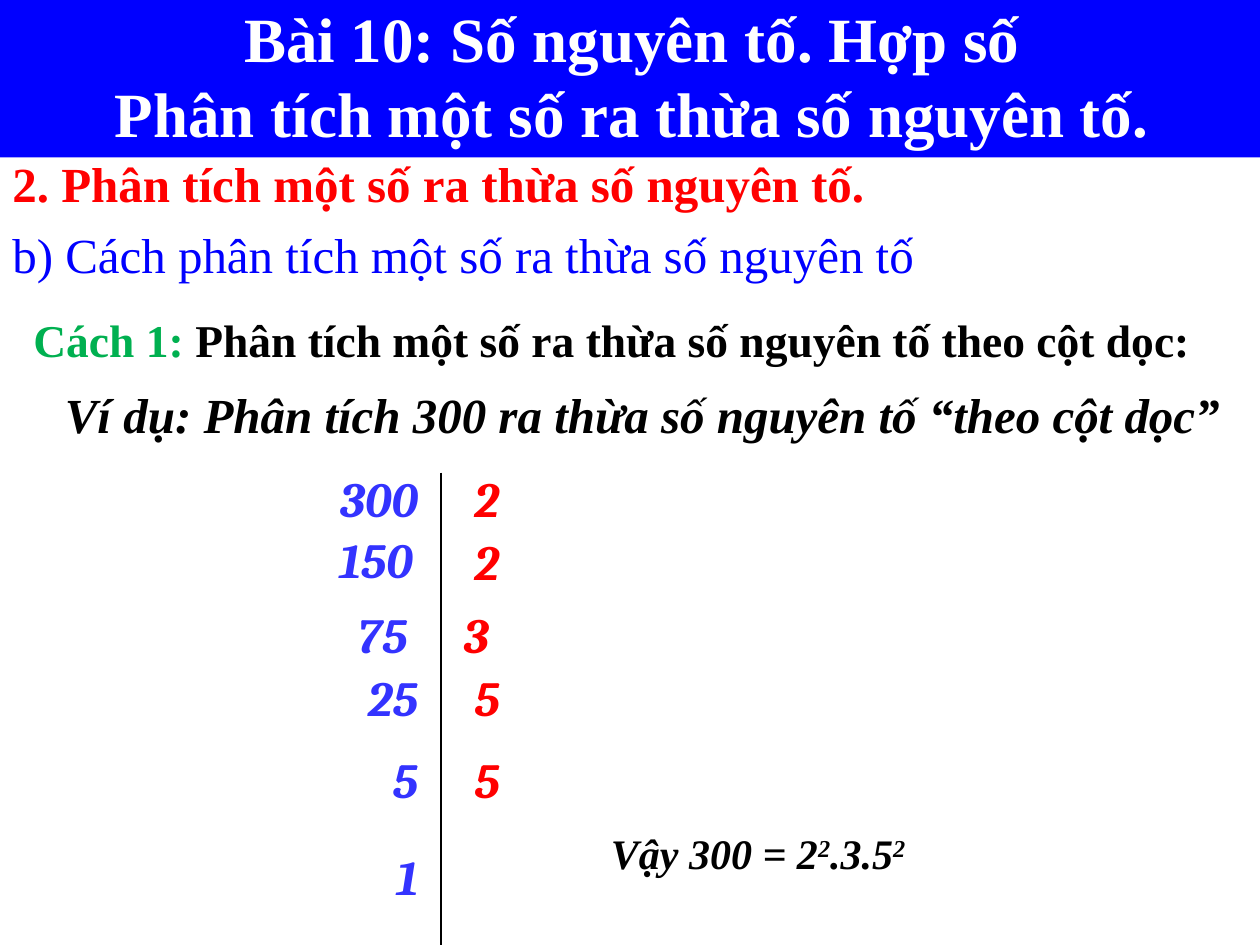
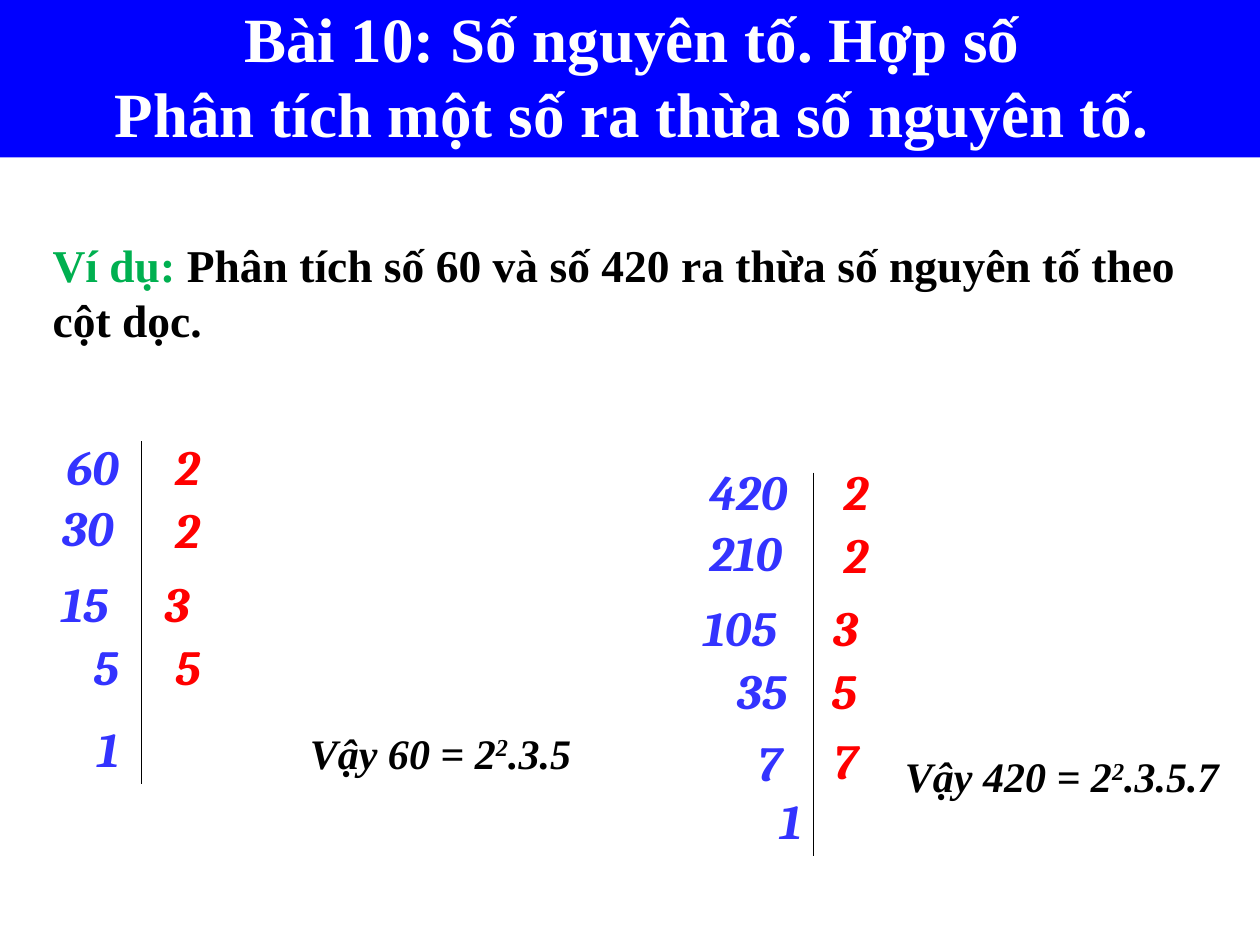
from lxml import etree
from pptx import Presentation
from pptx.dml.color import RGBColor
from pptx.enum.shapes import MSO_CONNECTOR
from pptx.enum.text import MSO_ANCHOR, MSO_AUTO_SIZE, PP_ALIGN
from pptx.oxml.ns import qn
from pptx.util import Pt

# Shared style
SERIF, DIGITS = "Times New Roman", "Cambria"
WHITE, BLACK, RED = "FFFFFF", "000000", "FF0000"
BLUE, GREEN, INDIGO = "0000FF", "00B050", "3333FF"
LESSON = ["Bài 10: Số nguyên tố. Hợp số",
          "Phân tích một số ra thừa số nguyên tố."]

# Ladder steps: offsets of the quotient's right edge and top,
# then of the factor's left edge and top
STEPS = [(-6, 0, 12, 0), (-9, 35, 12, 36), (-12, 78, 6, 78),
         (-6, 114, 12, 114), (-6, 161, 12, 161), (-6, 216, 12, 216)]
TIGHT_STEPS = STEPS[:3] + [(-6, 114, 5, 114), (-9, 155, 6, 154),
                           (2, 188, 6, 188)]


def color(hex_code):
    return RGBColor.from_string(hex_code)


def write(frame, paragraphs, size=28, font=SERIF, fill=BLACK, bold=True,
          italic=False, align=PP_ALIGN.LEFT):
    """Each paragraph is a list of (text, colour or None, superscript) runs."""
    frame.word_wrap = True
    for index, runs in enumerate(paragraphs):
        paragraph = frame.add_paragraph() if index else frame.paragraphs[0]
        paragraph.alignment = align
        for text, run_fill, superscript in runs:
            run = paragraph.add_run()
            run.text = text
            run.font.name, run.font.size = font, Pt(size)
            run.font.bold, run.font.italic = bold, italic
            run.font.color.rgb = color(run_fill or fill)
            if superscript:
                run._r.get_or_add_rPr().set("baseline", "30000")


def add_label(slide, left, top, width, height, runs, **text_format):
    label = slide.shapes.add_textbox(Pt(left), Pt(top), Pt(width), Pt(height))
    if isinstance(runs, str):
        runs = [(runs, None, False)]
    write(label.text_frame, [runs], **text_format)


def add_lesson_slide(deck):
    """New slide with the blue lesson title band."""
    slide = deck.slides.add_slide(deck.slide_layouts[5])
    band = slide.shapes.title
    band.left, band.top, band.width, band.height = (
        Pt(0), Pt(-4.5), Pt(722), Pt(94.5))
    band.fill.solid()
    band.fill.fore_color.rgb = color(BLUE)
    band.text_frame.auto_size = MSO_AUTO_SIZE.NONE
    band.text_frame.vertical_anchor = MSO_ANCHOR.MIDDLE
    write(band.text_frame, [[(line, None, False)] for line in LESSON],
          size=36, fill=WHITE, align=PP_ALIGN.CENTER)
    return slide


def add_bar(slide, x, top, bottom):
    bar = slide.shapes.add_connector(
        MSO_CONNECTOR.STRAIGHT, Pt(x), Pt(top), Pt(x), Pt(bottom))
    bar.line.color.rgb = color(BLACK)
    bar.line.width = Pt(0.75)
    etree.SubElement(bar._element.spPr, qn("a:effectLst"))


def add_ladder(slide, x, top, quotients, factors, steps=STEPS):
    """Quotients left of x, prime factors right of it."""
    for quotient, (right, down, _, _) in zip(quotients, steps):
        add_label(slide, x + right - 90, top + down, 90, 41, quotient,
                  font=DIGITS, fill=INDIGO, italic=True, align=PP_ALIGN.RIGHT)
    for factor, (_, _, left, down) in zip(factors, steps):
        add_label(slide, x + left, top + down, 54, 41, factor,
                  font=DIGITS, fill=RED, italic=True)


def add_conclusion(slide, left, top, formula):
    """In the formula, every second part between bars is an exponent."""
    runs = [(part, None, index % 2 == 1)
            for index, part in enumerate(formula.split("|"))]
    add_label(slide, left, top, 240, 36, runs, size=24, italic=True)


def add_task(slide, left, top, width, height, lead, task):
    add_label(slide, left, top, width, height,
              [(lead, GREEN, False), (task, None, False)], size=26)


def main():
    deck = Presentation()
    deck.slide_width, deck.slide_height = Pt(720), Pt(540)

    # Slide 1: the method and its worked example
    method = add_lesson_slide(deck)
    add_label(method, 0, 84, 588, 41,
              "2. Phân tích một số ra thừa số nguyên tố.", fill=RED)
    add_label(method, 0, 124.5, 720, 41,
              "b) Cách phân tích một số ra thừa số nguyên tố",
              fill=BLUE, bold=False)
    add_task(method, 12, 175, 750, 39, "Cách 1: ",
             "Phân tích một số ra thừa số nguyên tố theo cột dọc:")
    add_label(method, 30, 216, 677, 41,
              "Ví dụ: Phân tích 300 ra thừa số nguyên tố “theo cột dọc”",
              italic=True)
    add_bar(method, 252, 270, 552)
    add_ladder(method, 252, 264, ["300", "150", "75", "25", "5", "1"], "22355")
    add_conclusion(method, 342, 469.5, "Vậy 300 = 2|2|.3.5|2")

    # Slide 2: two more numbers side by side
    practice = add_lesson_slide(deck)
    add_task(practice, 23, 132, 696, 70.5, "Ví dụ: ",
             "Phân tích số 60 và số 420 ra thừa số nguyên tố theo cột dọc.")
    add_bar(practice, 81, 252, 448)
    add_ladder(practice, 81, 246, ["60", "30", "15", "5", "1"], "2235")
    add_conclusion(practice, 170, 412, "Vậy 60 = 2|2|.3.5")
    add_bar(practice, 465, 270, 489)
    add_ladder(practice, 463, 260, ["420", "210", "105", "35", "7", "1"],
               "22357", TIGHT_STEPS)
    add_conclusion(practice, 510, 425.5, "Vậy 420 = 2|2|.3.5.7")

    deck.save("out.pptx")


if __name__ == "__main__":
    main()
